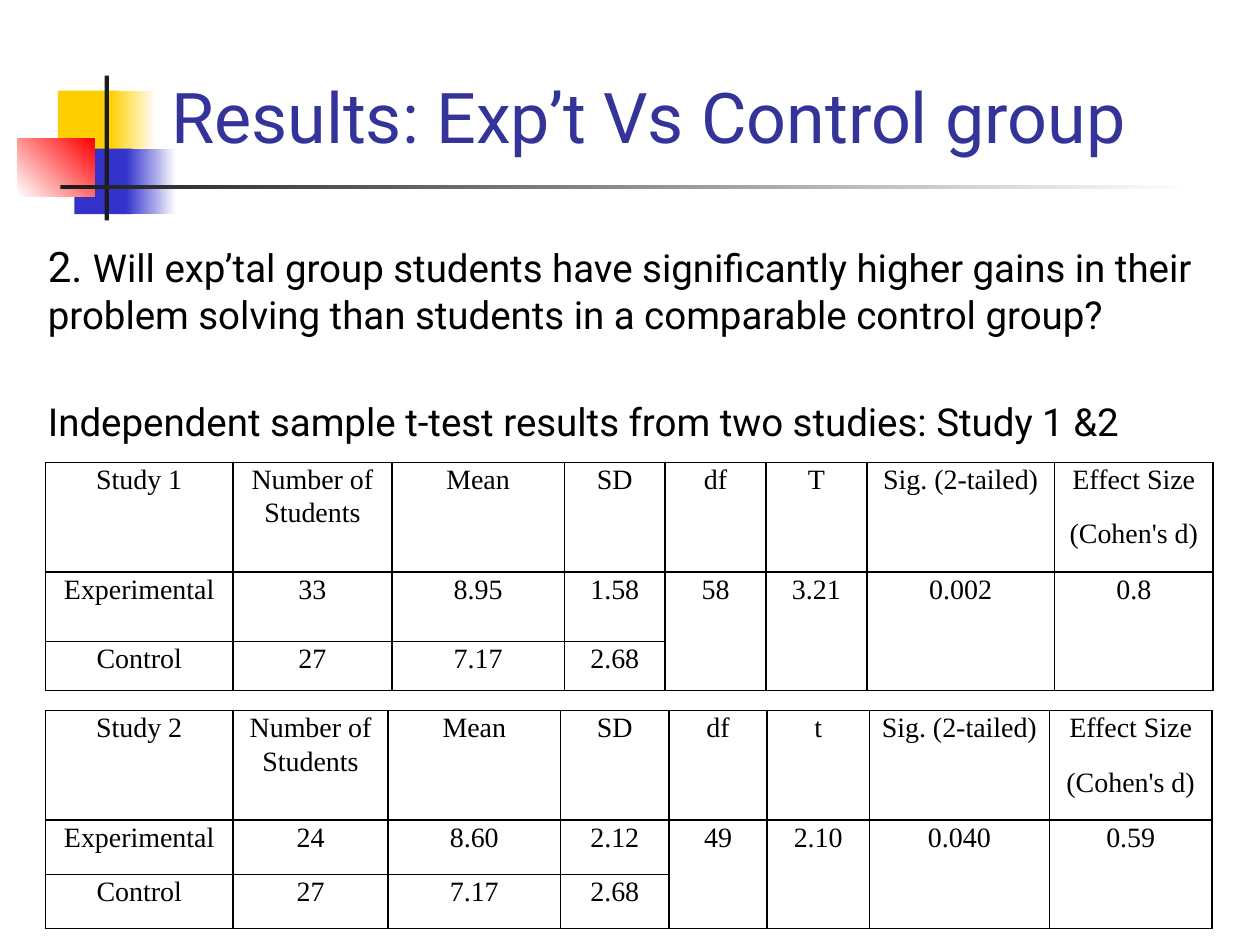
from itertools import accumulate
from lxml.etree import SubElement
from pptx import Presentation
from pptx.dml.color import RGBColor
from pptx.enum.shapes import MSO_SHAPE
from pptx.enum.text import MSO_ANCHOR, MSO_AUTO_SIZE, PP_ALIGN
from pptx.oxml import parse_xml
from pptx.oxml.ns import nsdecls, qn
from pptx.util import Inches, Pt

# The grid has 100 columns and 75 rows of equal size
COLS, ROWS = 100, 75
UNIT = Inches(0.1)

BLACK = RGBColor(0, 0, 0)
WHITE = RGBColor(0xFF, 0xFF, 0xFF)
INK = RGBColor(0x1C, 0x1C, 0x1C)
GOLD = RGBColor(0xFF, 0xCF, 0x01)
BLUE = RGBColor(0x33, 0x33, 0xCC)
RED = RGBColor(0xFF, 0, 0)
NAVY = RGBColor(0x33, 0x33, 0x99)
SANS, SERIF = "Roboto", "Times New Roman"


def grid(*cells):
    return [round(n * UNIT) for n in cells]


def place(shape, box):
    shape.left, shape.top, shape.width, shape.height = grid(*box)


def style(font, name, size, color):
    font.name, font.size = name, Pt(size)
    font.color.rgb = color


def block(slide, box, start, end=None, angle=0):
    """Add a plain bar, or one that fades from start to end."""
    bar = slide.shapes.add_shape(MSO_SHAPE.RECTANGLE, *grid(*box))
    bar.shadow.inherit = False
    bar.line.fill.background()
    if end is None:
        bar.fill.solid()
        bar.fill.fore_color.rgb = start
        return
    bar.fill.gradient()
    bar.fill.gradient_angle = angle
    for stop, color in zip(bar.fill.gradient_stops, (start, end)):
        stop.color.rgb = color


def emblem(slide, box):
    """Overlapping squares crossed by an upright bar and a fading rule."""
    left, top, width, _ = box
    parts = [
        ((3.2, 1.2, 4.8, 5.2), GOLD),
        ((7.4, 1.2, 3.6, 5.2), GOLD, WHITE),
        ((4.5, 5.8, 4.6, 5.2), BLUE),
        ((8.6, 5.8, 4, 5.2), BLUE, WHITE),
        ((0, 5, 6.1, 4.6), WHITE, RED, 45),
        ((6.9, 0, 0.35, 11.5), INK),
        ((3.4, 8.7, width - 3.4, 0.3), INK, WHITE),
    ]
    for (x, y, w, h), *paint in parts:
        block(slide, (left + x, top + y, w, h), *paint)


def heading(slide, box):
    title = slide.shapes.title
    place(title, box)
    frame = title.text_frame
    frame.text = "Results: Exp’t Vs Control group"
    frame.auto_size = MSO_AUTO_SIZE.NONE
    frame.vertical_anchor = MSO_ANCHOR.BOTTOM
    para = frame.paragraphs[0]
    para.alignment = PP_ALIGN.LEFT
    style(para.font, SANS, 40, NAVY)


def question(slide, box):
    body = slide.placeholders[1]
    place(body, box)
    frame = body.text_frame
    frame.auto_size = MSO_AUTO_SIZE.NONE
    first, second = frame.paragraphs[0], frame.add_paragraph()
    texts = [
        (first, "2. ", 24),
        (first, "Will exp’tal group students have significantly higher gains in "
                "their problem solving than students in a comparable control group?", 22),
        (second, "Independent sample t-test results from two studies: Study 1 &2", 22),
    ]
    for para, text, size in texts:
        run = para.add_run()
        run.text = text
        style(run.font, SANS, size, BLACK)
    for para, gap in ((first, 0), (second, 35)):
        para.space_before = Pt(gap)
        props = para._p.get_or_add_pPr()
        props.set("marL", "0")
        props.set("indent", "0")
        SubElement(props, qn("a:buNone"))


def border(cell):
    props = cell._tc.get_or_add_tcPr()
    for spot, side in enumerate("LRTB"):
        props.insert(spot, parse_xml(
            f'<a:ln{side} {nsdecls("a")} w="{Pt(1)}"><a:solidFill>'
            f'<a:srgbClr val="{BLACK}"/></a:solidFill></a:ln{side}>'))


def fill(cell, text):
    cell.fill.background()
    border(cell)
    cell.margin_left = cell.margin_right = Inches(0.07)
    cell.margin_top = cell.margin_bottom = 0
    cell.text = text
    for para in cell.text_frame.paragraphs:
        para.alignment = PP_ALIGN.CENTER
        para.line_spacing = 1.07
        para.space_before = para.space_after = Pt(6)
        style(para.font, SERIF, 16, BLACK)


def study(slide, box, widths, heights, data):
    """Add one study's table; its last four columns span both groups."""
    table = slide.shapes.add_table(len(heights), len(widths), *grid(*box)).table
    table.first_row = table.horz_banding = False
    # Round the running edges so that the columns and rows fill the box
    for tracks, sizes, name in ((table.columns, widths, "width"),
                                (table.rows, heights, "height")):
        edges = grid(0, *accumulate(sizes))
        for track, near, far in zip(tracks, edges, edges[1:]):
            setattr(track, name, far - near)
    for r, row in enumerate(data):
        for c in range(len(widths)):
            fill(table.cell(r, c), row[c] if c < len(row) else "")
    for c in range(4, len(widths)):
        table.cell(1, c).merge(table.cell(2, c))


def header(name, test):
    return [name, "Number of Students", "Mean", "SD", "df", test,
            "Sig. (2-tailed)", "Effect Size\n(Cohen's d)"]


def main():
    deck = Presentation()
    deck.slide_width, deck.slide_height = grid(COLS, ROWS)
    slide = deck.slides.add_slide(deck.slide_layouts[1])

    emblem(slide, (1.4, 6, 93.4, 11.5))
    heading(slide, (12.6, 2.3, 85.2, 10.7))
    question(slide, (2.8, 18.6, 95.2, 56.4))

    control = ["Control", "27", "7.17", "2.68"]
    study(slide, (3.6, 36.7, 92.7, 18.1),
          [14.9, 12.6, 13.7, 8, 8, 8, 14.9, 12.6], [8.7, 5.5, 3.9],
          [header("Study 1", "T"),
           ["Experimental", "33", "8.95", "1.58", "58", "3.21", "0.002", "0.8"],
           control])
    study(slide, (3.6, 56.4, 92.7, 17.3),
          [14.9, 12.3, 13.7, 8.6, 7.8, 8.1, 14.3, 12.9], [8.7, 4.3, 4.3],
          [header("Study 2", "t"),
           ["Experimental", "24", "8.60", "2.12", "49", "2.10", "0.040", "0.59"],
           control])
    deck.save("out.pptx")


if __name__ == "__main__":
    main()
